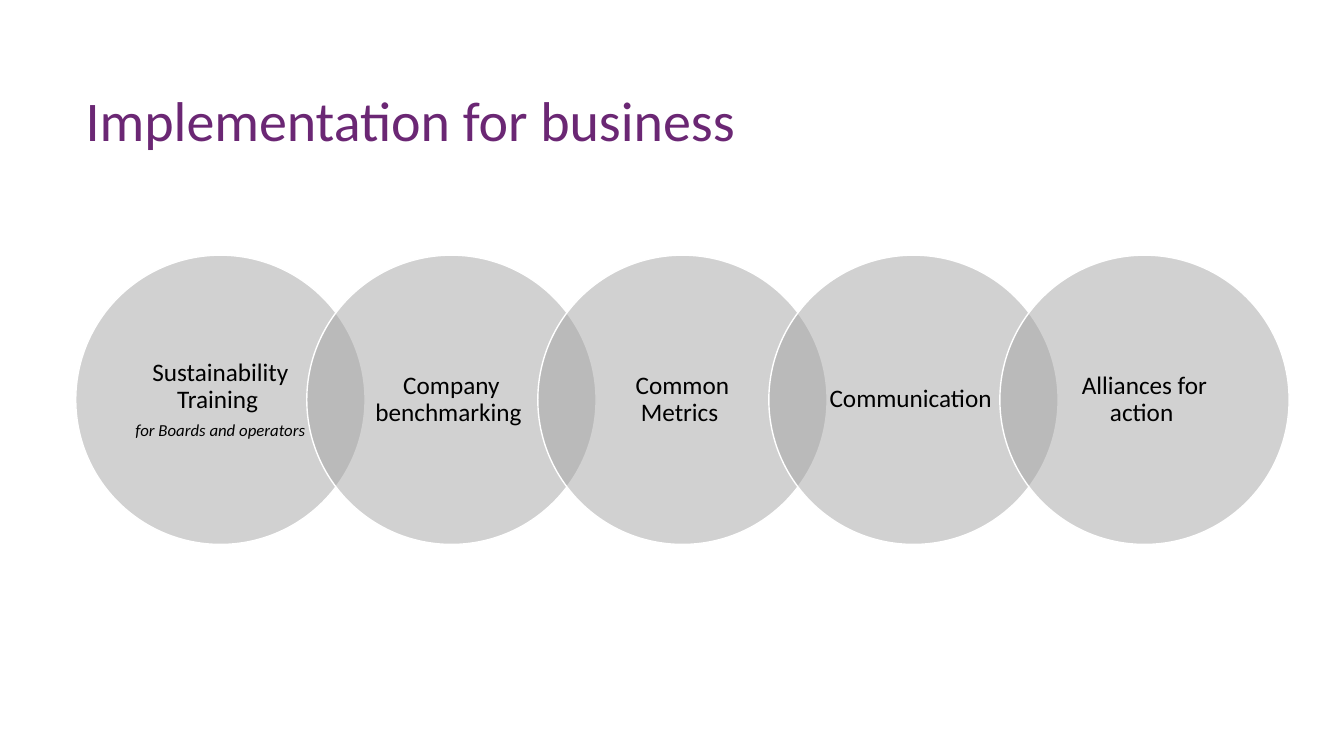
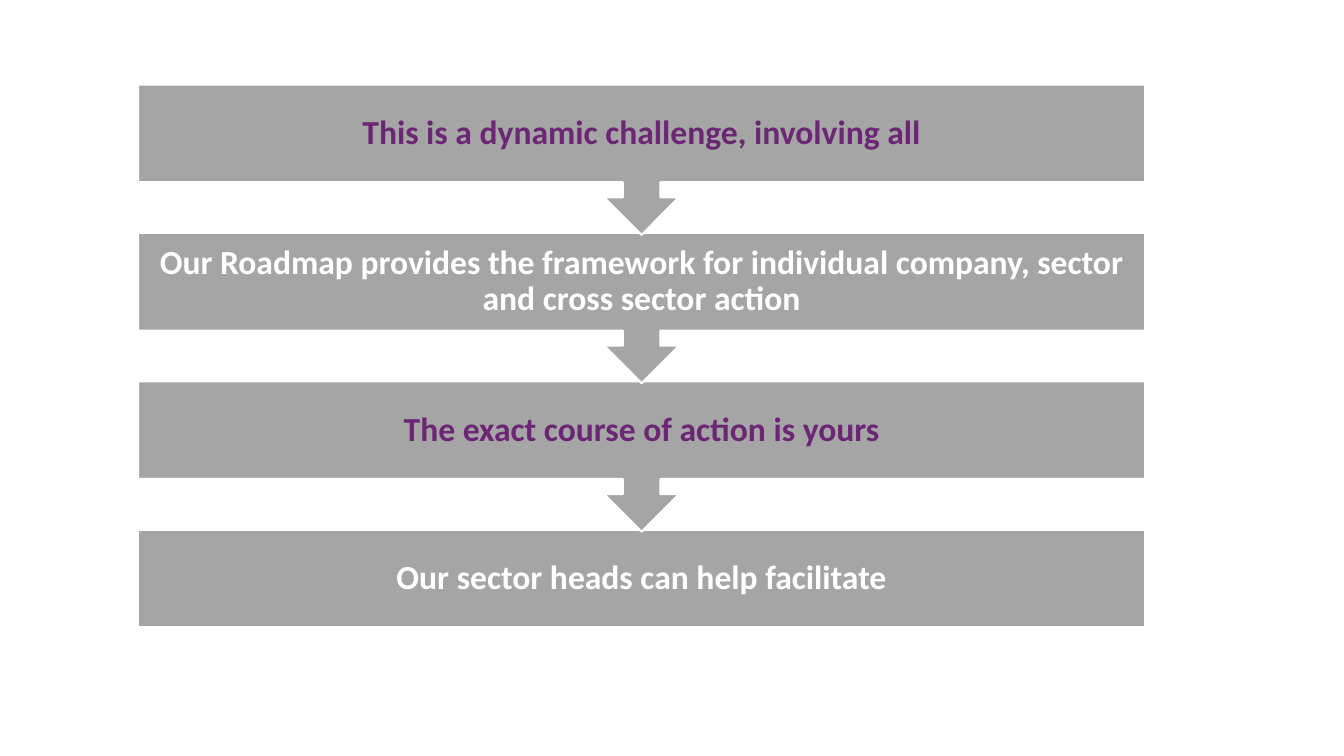
from lxml import etree
from pptx import Presentation
from pptx.dml.color import RGBColor
from pptx.enum.shapes import MSO_SHAPE
from pptx.enum.text import MSO_ANCHOR, PP_ALIGN
from pptx.oxml.ns import qn
from pptx.util import Cm, Pt

OVAL = MSO_SHAPE.OVAL
RECT = MSO_SHAPE.RECTANGLE
CALL = MSO_SHAPE.DOWN_ARROW_CALLOUT
MID = MSO_ANCHOR.MIDDLE
CENTER = PP_ALIGN.CENTER

FONT = "Calibri"
COLORS = {"plum": "6B2774", "gray": "A5A5A5", "white": "FFFFFF", "black": "000000"}


def add_run(para, text, size, color, bold=False, italic=False):
    run = para.add_run()
    run.text = text
    font = run.font
    font.name = FONT
    font.size = Pt(size)
    font.bold = bold
    font.italic = italic
    font.color.rgb = RGBColor.from_string(COLORS[color])


def add_form(slide, kind, left, top, width, height, edge, side, pad):
    form = slide.shapes.add_shape(kind, Cm(left), Cm(top), Cm(width), Cm(height))
    form.shadow.inherit = False
    form.fill.solid()
    form.fill.fore_color.rgb = RGBColor.from_string(COLORS["gray"])
    form.line.color.rgb = RGBColor.from_string(COLORS["white"])
    form.line.width = Pt(edge)
    frame = form.text_frame
    frame.word_wrap = True
    frame.vertical_anchor = MID
    frame.margin_left = frame.margin_right = Cm(side)
    frame.margin_top = frame.margin_bottom = Cm(pad)
    para = frame.paragraphs[0]
    para.alignment = CENTER
    para.line_spacing = 0.9
    return form


deck = Presentation()
deck.slide_width = Cm(33.87)
deck.slide_height = Cm(19.05)
blank = deck.slide_layouts[6]

slide = deck.slides.add_slide(blank)
title = slide.shapes.add_textbox(Cm(1.91), Cm(2.03), Cm(18.8), Cm(1.96))
title.text_frame.word_wrap = True
add_run(title.text_frame.paragraphs[0], "Implementation for business", 40, "plum")

steps = [
    ("Sustainability Training ", "for Boards and operators "),
    ("Company benchmarking ", None),
    ("Common Metrics ", None),
    ("Communication ", None),
    ("Alliances for action ", None),
]
size = 7.29
pitch = 0.8 * size - 0.01
for num, (name, note) in enumerate(steps):
    disc = add_form(slide, OVAL, 1.91 + num * pitch, 6.43, size, size, 1, 0.4, 0.08)
    tint = disc.fill._xPr.find(qn("a:solidFill"))[0]
    etree.SubElement(tint, qn("a:alpha")).set("val", "50000")
    frame = disc.text_frame
    add_run(frame.paragraphs[0], name, 18, "black")
    if note:
        para = frame.add_paragraph()
        para.alignment = CENTER
        para.line_spacing = 0.9
        para.space_before = Pt(6)
        add_run(para, note, 12, "black", italic=True)

slide = deck.slides.add_slide(blank)
points = [
    ("This is a dynamic challenge, involving all", "plum"),
    ("Our Roadmap provides the framework for individual company, sector "
     "and cross sector action", "white"),
    ("The exact course of action is yours", "plum"),
    ("Our sector heads can help facilitate", "white"),
]
last = len(points) - 1
for num in range(last, -1, -1):
    text, color = points[num]
    kind, height = (RECT, 2.46) if num == last else (CALL, 3.79)
    box = add_form(slide, kind, 3.48, 2.13 + num * 3.74, 25.38, height, 1.5, 0.48, 0.1)
    add_run(box.text_frame.paragraphs[0], text, 24, color, bold=True)

deck.save("out.pptx")
